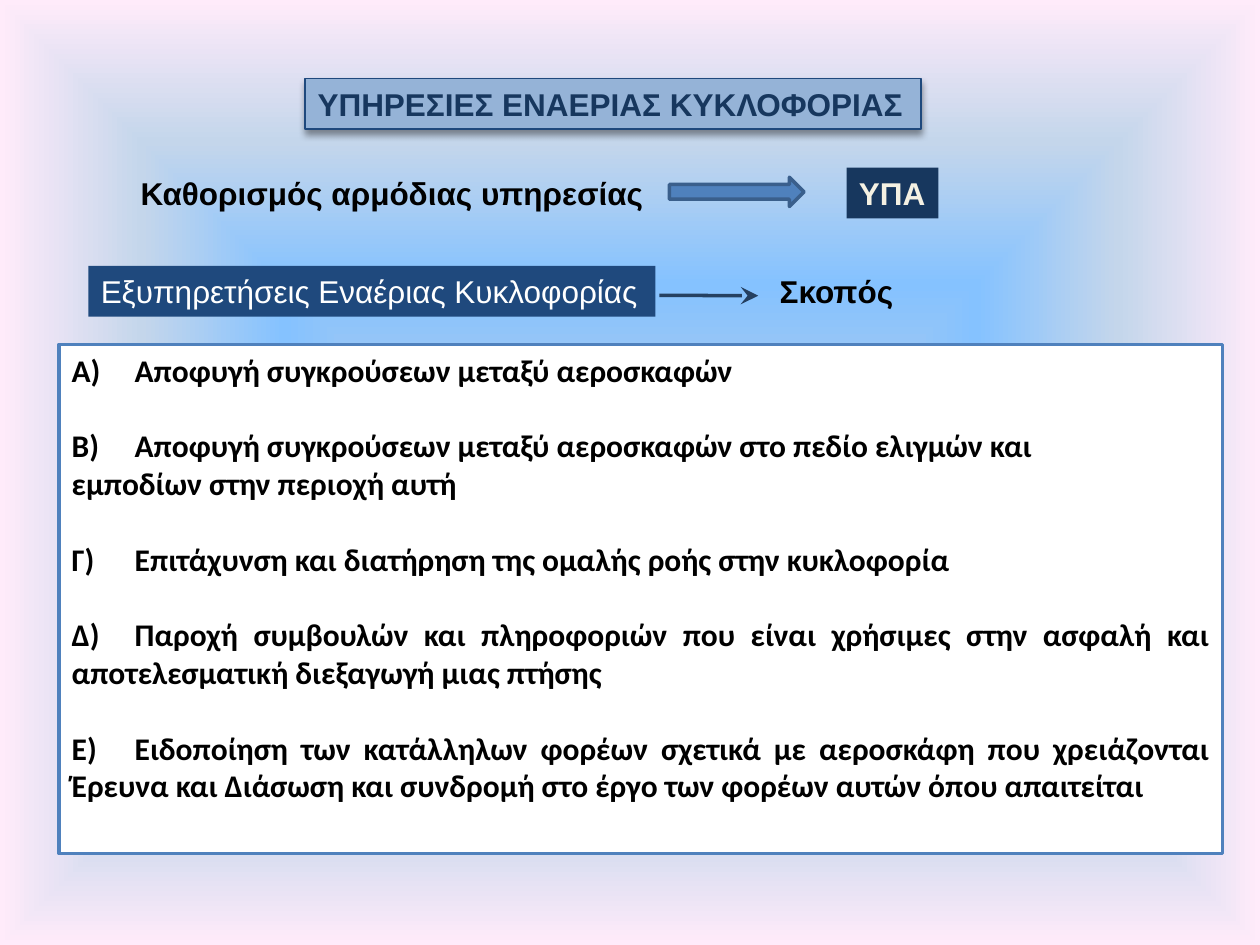
from dataclasses import dataclass

from lxml import etree
from pptx import Presentation
from pptx.dml.color import RGBColor
from pptx.enum.shapes import MSO_CONNECTOR, MSO_SHAPE
from pptx.enum.text import MSO_ANCHOR, MSO_AUTO_SIZE, PP_ALIGN
from pptx.util import Pt

NAMESPACE = "http://schemas.openxmlformats.org/drawingml/2006/main"


@dataclass(frozen=True)
class Theme:
    navy: str = "17375E"
    blue: str = "1F497D"
    pale_blue: str = "95B3D7"
    accent: str = "4F81BD"
    accent_edge: str = "3A5F8C"
    connector: str = "254061"
    cream: str = "F4F1E3"
    white: str = "FFFFFF"
    black: str = "000000"
    gradient: tuple = ((0, "B9CDE5"), (40, "85C2FF"), (70, "C4D6EB"), (100, "FFEBFA"))
    heading_font: str = "Arial"
    body_font: str = "Calibri"
    text_size: int = 18


theme = Theme()


def append_xml(parent, xml):
    parent.append(etree.fromstring(xml.replace(">", f' xmlns:a="{NAMESPACE}">', 1)))


def style_box(shape, box, color, font=theme.heading_font, bold=True,
              fill=None, line=None, line_width=0.75, wrap=False):
    """Place a box holding text and format its fill, line and runs."""
    shape.left, shape.top, shape.width, shape.height = map(Pt, box)
    if fill:
        shape.fill.solid()
        shape.fill.fore_color.rgb = RGBColor.from_string(fill)
    if line:
        shape.line.color.rgb = RGBColor.from_string(line)
        shape.line.width = Pt(line_width)
    frame = shape.text_frame
    frame.word_wrap = wrap
    frame.auto_size = MSO_AUTO_SIZE.NONE
    frame.vertical_anchor = MSO_ANCHOR.TOP
    for paragraph in frame.paragraphs:
        paragraph.alignment = PP_ALIGN.JUSTIFY if wrap else PP_ALIGN.LEFT
        for run in paragraph.runs:
            run.font.name = font
            run.font.size = Pt(theme.text_size)
            run.font.bold = bold
            run.font.color.rgb = RGBColor.from_string(color)


presentation = Presentation()
presentation.slide_width, presentation.slide_height = Pt(720), Pt(540)
slide = presentation.slides.add_slide(presentation.slide_layouts[1])

# Background: gradient spreading from the centre
background_fill = slide.background.fill
background_fill.gradient()
gradient = background_fill._fill._gradFill
for child in list(gradient):
    gradient.remove(child)
stops = "".join(f'<a:gs pos="{position * 1000}"><a:srgbClr val="{color}"/></a:gs>'
                for position, color in theme.gradient)
append_xml(gradient, f"<a:gsLst>{stops}</a:gsLst>")
append_xml(gradient, '<a:path path="shape"><a:fillToRect l="50000" t="50000" '
                     'r="50000" b="50000"/></a:path>')

# Title with a soft shadow
title = slide.shapes.title
title.text_frame.text = "ΥΠΗΡΕΣΙΕΣ ΕΝΑΕΡΙΑΣ ΚΥΚΛΟΦΟΡΙΑΣ"
style_box(title, (174.25, 44.75, 352, 29), theme.navy,
          fill=theme.pale_blue, line=theme.blue)
append_xml(title._element.spPr,
           '<a:effectLst><a:outerShdw blurRad="50800" dist="38100" dir="5400000" '
           'rotWithShape="0"><a:srgbClr val="000000"><a:alpha val="40000"/>'
           '</a:srgbClr></a:outerShdw></a:effectLst>')

# List of purposes: lettered items, the second continued on a line of its own
purposes = [
    "Α)\tΑποφυγή συγκρούσεων μεταξύ αεροσκαφών",
    "Β)\tΑποφυγή συγκρούσεων μεταξύ αεροσκαφών στο πεδίο ελιγμών και",
    "εμποδίων στην περιοχή αυτή",
    "Γ)\tΕπιτάχυνση και διατήρηση της ομαλής ροής στην κυκλοφορία",
    "Δ)\tΠαροχή συμβουλών και πληροφοριών που είναι χρήσιμες στην ασφαλή και "
    "αποτελεσματική διεξαγωγή μιας πτήσης",
    "Ε)\tΕιδοποίηση των κατάλληλων φορέων σχετικά με αεροσκάφη που χρειάζονται "
    "Έρευνα και Διάσωση και συνδρομή στο έργο των φορέων αυτών όπου απαιτείται",
]
body = slide.placeholders[1]
body.text_frame.text = "\n".join(purposes)
style_box(body, (33.75, 196.75, 664.75, 291), theme.black, font=theme.body_font,
          fill=theme.white, line=theme.accent, line_width=2, wrap=True)
for index, paragraph in enumerate(body.text_frame.paragraphs):
    starts_item = index > 0 and "\t" in purposes[index]
    paragraph.space_before = Pt(21.6 if starts_item else 0)
    properties = paragraph._p.get_or_add_pPr()
    properties.set("marL", "0")
    properties.set("indent", "0")
    append_xml(properties, "<a:buNone></a:buNone>")
    append_xml(properties, f'<a:tabLst><a:tab pos="{Pt(28)}" algn="l"/></a:tabLst>')

# Labels: text, box, text colour, fill, bold
labels = [
    ("Καθορισμός αρμόδιας υπηρεσίας", (73.25, 95.75, 310, 29), theme.black, None, True),
    ("ΥΠΑ", (483.75, 95.75, 52.5, 29), theme.cream, theme.navy, True),
    ("Εξυπηρετήσεις Εναέριας Κυκλοφορίας", (50.5, 152, 324, 29),
     theme.white, theme.blue, False),
    ("Σκοπός", (438.5, 152, 80, 29), theme.black, None, True),
]
for text, box, color, fill, bold in labels:
    label = slide.shapes.add_textbox(*map(Pt, box))
    label.text_frame.text = text
    style_box(label, box, color, fill=fill, bold=bold)

# Block arrow towards the responsible authority
arrow = slide.shapes.add_shape(MSO_SHAPE.RIGHT_ARROW, Pt(382.5), Pt(101.25), Pt(77), Pt(16.75))
arrow.shadow.inherit = False
arrow.fill.solid()
arrow.fill.fore_color.rgb = RGBColor.from_string(theme.accent)
arrow.line.color.rgb = RGBColor.from_string(theme.accent_edge)
arrow.line.width = Pt(2)

# Thin arrow towards the purpose
connector = slide.shapes.add_connector(MSO_CONNECTOR.STRAIGHT,
                                       Pt(376.75), Pt(168.75), Pt(433.25), Pt(169))
connector.line.color.rgb = RGBColor.from_string(theme.connector)
connector.line.width = Pt(2)
append_xml(connector.line._get_or_add_ln(), '<a:tailEnd type="stealth" w="lg" len="lg"></a:tailEnd>')
append_xml(connector._element.spPr, "<a:effectLst></a:effectLst>")

presentation.save("out.pptx")
